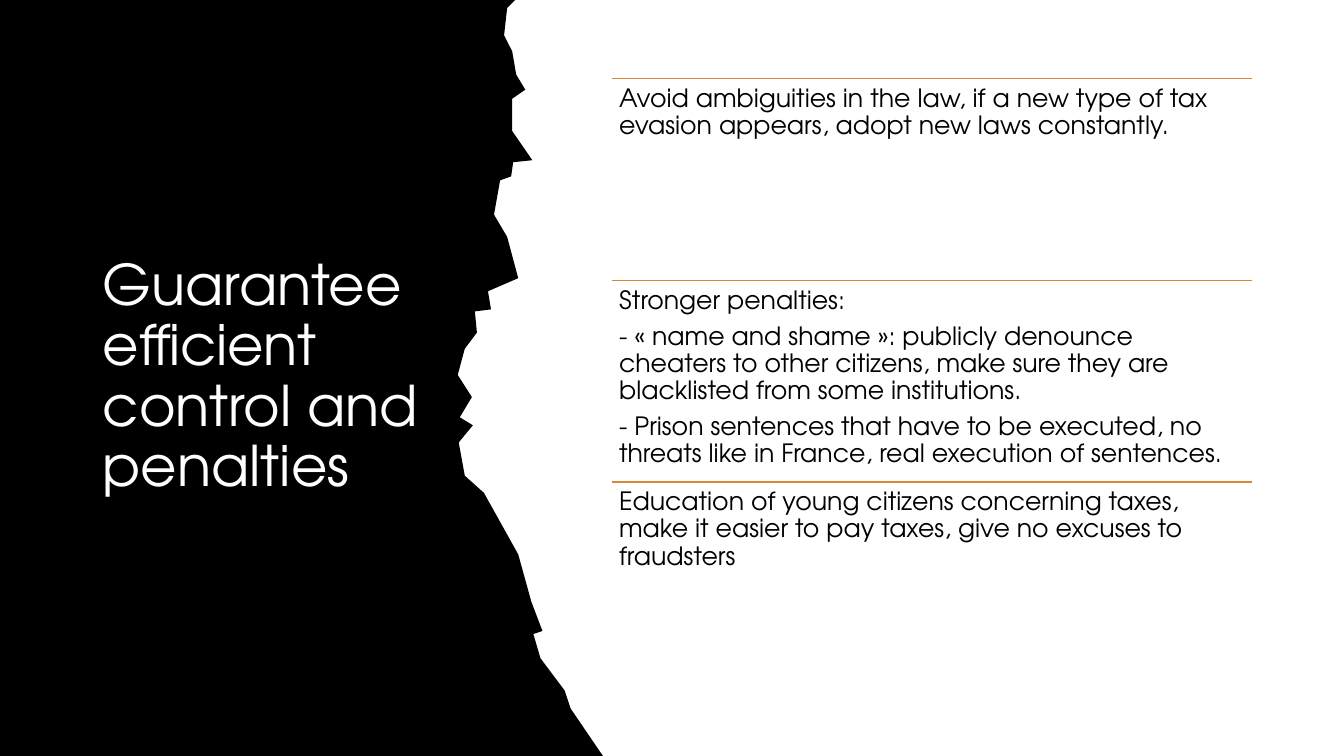
from lxml.etree import SubElement
from pptx import Presentation
from pptx.dml.color import RGBColor
from pptx.enum.shapes import MSO_CONNECTOR as Conn
from pptx.enum.text import MSO_ANCHOR as Anchor, MSO_AUTO_SIZE as Fit, PP_ALIGN as Align
from pptx.oxml.ns import qn
from pptx.util import Pt

PX = 9144  # 100 px to the inch


def color(code):
    return RGBColor.from_string(code)


def style(par, size, code, after):
    """Format one paragraph and its font."""
    for key, val in {"line_spacing": 0.9, "space_before": Pt(0),
                     "space_after": Pt(after), "alignment": Align.LEFT}.items():
        setattr(par, key, val)
    for key, val in {"size": Pt(size), "name": "TeX Gyre Adventor"}.items():
        setattr(par.font, key, val)
    par.font.color.rgb = color(code)


deck = Presentation()
deck.slide_width, deck.slide_height = 1333 * PX, 750 * PX
slide = deck.slides.add_slide(deck.slide_layouts[5])
shapes = slide.shapes

# Torn edge from top to bottom, closed along the left side
edge = [
    (511, 0), (503, 8), (500, 35), (508, 51), (512, 74), (521, 89), (508, 98),
    (508, 130), (528, 159), (509, 161), (507, 175), (496, 179), (490, 213),
    (503, 235), (514, 276), (484, 289), (487, 307), (471, 309), (473, 330),
    (461, 346), (454, 372), (468, 394), (456, 414), (469, 422), (455, 439),
    (461, 472), (480, 489), (514, 550), (527, 597), (538, 626), (529, 629),
    (536, 653), (560, 685), (566, 703), (598, 750), (0, 750),
]
pen = shapes.build_freeform(0, 0, scale=PX)
pen.add_line_segments(edge)
torn = pen.convert_to_shape()
torn.shadow.inherit = False
torn.fill.solid()
torn.fill.fore_color.rgb = color("000000")
torn.line.fill.background()

title = shapes.title
title.element.addprevious(torn.element)
for key, val in {"left": 92, "top": 78, "width": 350, "height": 594}.items():
    setattr(title, key, val * PX)
frame = title.text_frame
frame.text = "Guarantee efficient control and penalties"
for key, val in {"word_wrap": True, "auto_size": Fit.NONE,
                 "vertical_anchor": Anchor.MIDDLE}.items():
    setattr(frame, key, val)
style(frame.paragraphs[0], 40, "FFFFFF", 0)

rows = [
    ["Avoid ambiguities in the law, if a new type of tax evasion appears, "
     "adopt new laws constantly."],
    ["Stronger penalties:",
     "- « name and shame »: publicly denounce cheaters to other citizens, "
     "make sure they are blacklisted from some institutions.",
     "- Prison sentences that have to be executed, no threats like in France, "
     "real execution of sentences."],
    ["Education of young citizens concerning taxes, make it easier to pay taxes, "
     "give no excuses to fraudsters"],
]
left, top, width, height = 607 * PX, 78 * PX, 635 * PX, 200 * PX
for n, texts in enumerate(rows):
    y = top + n * height
    rule = shapes.add_connector(Conn.STRAIGHT, left, y, left + width, y)
    rule.line.color.rgb = color("D5873A")
    rule.line.width = Pt(1)
    SubElement(rule.element.spPr, qn("a:effectLst"))

    frame = shapes.add_textbox(left, y, width, height).text_frame
    frame.word_wrap = True
    for side in ("left", "top", "right", "bottom"):
        setattr(frame, f"margin_{side}", 7 * PX)
    frame.text = "\n".join(texts)
    for par in frame.paragraphs:
        style(par, 18, "000000", 6.3)

deck.save("out.pptx")
